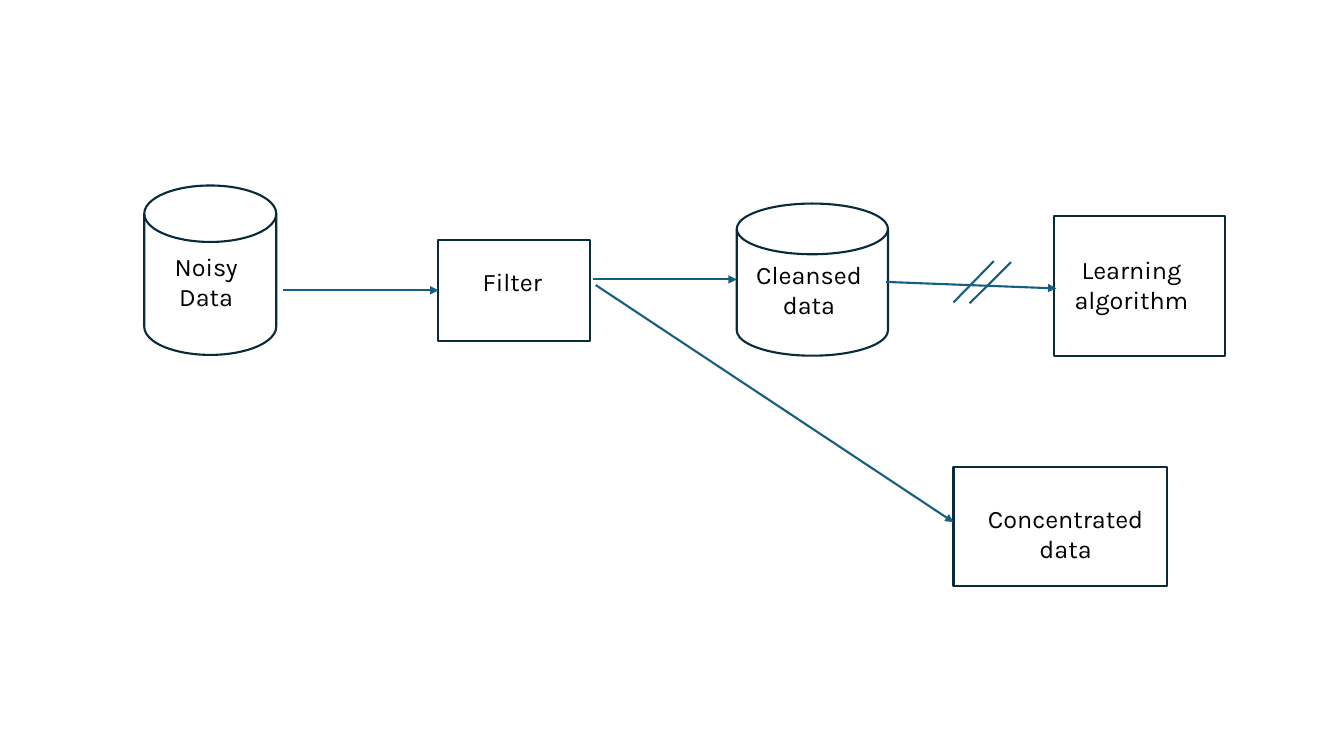
"""Build a slide showing how a filter splits noisy data before learning."""
from dataclasses import dataclass
from typing import Optional

from lxml.etree import SubElement
from pptx import Presentation
from pptx.dml.color import RGBColor
from pptx.enum.shapes import MSO_CONNECTOR, MSO_SHAPE
from pptx.enum.text import MSO_AUTO_SIZE, PP_ALIGN
from pptx.oxml.ns import qn
from pptx.util import Pt

COLORS = {"outline": "092A39", "arrow": "156082", "text": "000000"}
DISK = MSO_SHAPE.FLOWCHART_MAGNETIC_DISK
RECT = MSO_SHAPE.RECTANGLE


@dataclass(frozen=True)
class Node:
    name: str
    kind: MSO_SHAPE
    box: tuple[float, float, float, float]


@dataclass(frozen=True)
class Label:
    text: str
    box: tuple[float, float, float, float]
    align: PP_ALIGN = PP_ALIGN.CENTER


@dataclass(frozen=True)
class Link:
    start: tuple[float, float]
    end: tuple[float, float]
    arrow: bool = True
    target: Optional[str] = None


NODES = [
    Node("noisy", DISK, (103, 132.5, 94.3, 121)),
    Node("filter", RECT, (313.2, 171.4, 108, 72)),
    Node("cleansed", DISK, (526.3, 145.4, 108, 108.7)),
    Node("learning", RECT, (753.1, 154.1, 121.7, 100)),
    Node("concentrated", RECT, (681.1, 333.4, 152.6, 85)),
]
LINKS = [
    Link((202.3, 207.4), (313.2, 207.4), target="filter"),
    Link((423.4, 199.6), (526.3, 199.6)),
    Link((632.9, 201.4), (754.6, 206)),
    Link((425.5, 203.6), (681.1, 373)),
]
LABELS = [
    Label("Noisy Data", (115.2, 175.7, 64.1, 51)),
    Label("Filter", (337.7, 186.5, 67, 29), PP_ALIGN.LEFT),
    Label("Cleansed\ndata", (529.2, 181.4, 97.2, 51)),
    Label("Learning\nalgorithm", (759.6, 177.8, 97.2, 51)),
    Label("Concentrated data", (693.4, 355.7, 135.4, 51)),
]
BREAK_MARKS = [
    Link((709.9, 186.5), (681.1, 216), arrow=False),
    Link((722.2, 187.2), (692.6, 216.7), arrow=False),
]


def color(name: str) -> RGBColor:
    return RGBColor.from_string(COLORS[name])


def add_node(s, node: Node):
    sp = s.shapes.add_shape(node.kind, *map(Pt, node.box))
    sp.shadow.inherit = False
    sp.fill.background()
    sp.line.color.rgb = color("outline")
    sp.line.width = Pt(1.5)
    return sp


def add_link(s, link: Link, nodes: dict) -> None:
    cxn = s.shapes.add_connector(
        MSO_CONNECTOR.STRAIGHT, *map(Pt, link.start + link.end))
    cxn.line.color.rgb = color("arrow")
    cxn.line.width = Pt(1.5)
    if link.arrow:
        SubElement(cxn.line._get_or_add_ln(), qn("a:tailEnd"), type="triangle")
    SubElement(cxn._element.spPr, qn("a:effectLst"))
    if link.target:
        cxn.end_connect(nodes[link.target], 1)


def add_text(s, text: str, *, box: tuple, align: PP_ALIGN,
             font: str = "Karla", size: float = 18, fill: str = "text") -> None:
    tf = s.shapes.add_textbox(*map(Pt, box)).text_frame
    tf.word_wrap = True
    tf.auto_size = MSO_AUTO_SIZE.SHAPE_TO_FIT_TEXT
    tf.text = text
    for p in tf.paragraphs:
        p.alignment = align
        for r in p.runs:
            r.font.name = font
            r.font.size = Pt(size)
            r.font.color.rgb = color(fill)


def main() -> None:
    prs = Presentation()
    prs.slide_width, prs.slide_height = Pt(960), Pt(540)
    s = prs.slides.add_slide(prs.slide_layouts[6])
    nodes = {node.name: add_node(s, node) for node in NODES}
    for link in LINKS:
        add_link(s, link, nodes)
    for label in LABELS:
        add_text(s, label.text, box=label.box, align=label.align)
    for mark in BREAK_MARKS:
        add_link(s, mark, nodes)
    prs.save("out.pptx")


if __name__ == "__main__":
    main()
